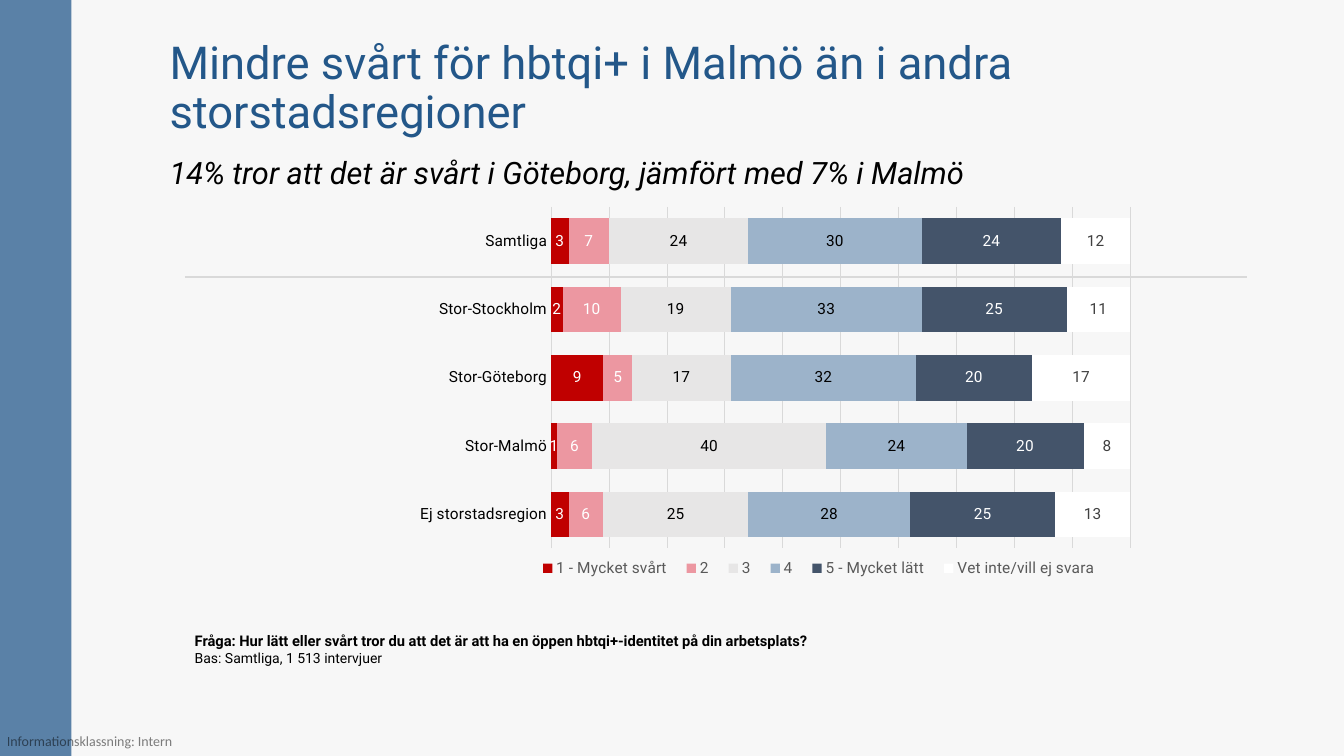
import pptx
import pptx.chart.data
import pptx.dml.color
import pptx.enum.chart
import pptx.enum.shapes
import pptx.enum.text
import pptx.oxml
import pptx.oxml.ns
import pptx.util
from pptx.util import Pt

COLORS = {
    "background": "F7F7F7", "band": "5A81A7", "title": "235789",
    "black": "000000", "white": "FFFFFF", "rule": "D9D9D9",
    "legend": "595959", "unsure_label": "404040",
    "hard": "C00000", "rather_hard": "EC97A1", "neutral": "E7E6E6",
    "rather_easy": "9CB3CA", "easy": "44546A",
}
RGB = {name: pptx.dml.color.RGBColor.from_string(h) for name, h in COLORS.items()}
qn = pptx.oxml.ns.qn


def add_text(text, left, top, width, height, size, color="black", font="Roboto",
             bold=False, italic=False, middle=False, margins=True, spacing=None):
    """Add a text box with one paragraph per line of text."""
    tf = s.shapes.add_textbox(Pt(left), Pt(top), Pt(width), Pt(height)).text_frame
    tf.word_wrap = margins
    if middle:
        tf.vertical_anchor = pptx.enum.text.MSO_ANCHOR.MIDDLE
    if not margins:
        tf.margin_left = tf.margin_right = tf.margin_top = tf.margin_bottom = 0
    for i, line in enumerate(text.split("\n")):
        p = tf.paragraphs[0] if i == 0 else tf.add_paragraph()
        p.line_spacing = spacing
        r = p.add_run()
        r.text = line
        r.font.size, r.font.name = Pt(size), font
        r.font.bold, r.font.italic = bold, italic
        r.font.color.rgb = RGB[color]
    return tf


def set_layout(parent, position, x, y, w, h, target=""):
    """Place a chart part by fractions of the chart's size."""
    for old in parent.findall(qn("c:layout")):
        parent.remove(old)
    parent.insert(position, pptx.oxml.parse_xml(
        f'<c:layout {pptx.oxml.ns.nsdecls("c")}><c:manualLayout>{target}'
        '<c:xMode val="edge"/><c:yMode val="edge"/>'
        f'<c:x val="{x}"/><c:y val="{y}"/><c:w val="{w}"/><c:h val="{h}"/>'
        '</c:manualLayout></c:layout>'))


prs = pptx.Presentation()
prs.slide_width, prs.slide_height = Pt(960), Pt(540)
s = prs.slides.add_slide(prs.slide_layouts[6])
s.background.fill.solid()
s.background.fill.fore_color.rgb = RGB["background"]

# Side band and classification
band = s.shapes.add_shape(pptx.enum.shapes.MSO_SHAPE.RECTANGLE, 0, 0, Pt(51), Pt(540))
band.shadow.inherit = False
band.fill.solid()
band.fill.fore_color.rgb = RGB["band"]
band.line.fill.background()
tf = add_text("Informationsklassning: Intern", 5, 523, 121, 12, 10,
              font="Calibri", margins=False)
fill = tf.paragraphs[0].runs[0].font.fill
fill.solid()
fill.fore_color.rgb = RGB["black"]
for clr in tf.paragraphs[0].runs[0].font._element.iter(qn("a:srgbClr")):
    clr.append(pptx.oxml.parse_xml(
        f'<a:alpha {pptx.oxml.ns.nsdecls("a")} val="50000"/>'))

add_text("Mindre svårt för hbtqi+ i Malmö än i andra storstadsregioner",
         114, 29, 732, 69, 32.4, "title", middle=True, spacing=0.9)

# Chart of answers by region
data = pptx.chart.data.CategoryChartData(number_format="0")
data.categories = ["Ej storstadsregion", "Stor-Malmö", "Stor-Göteborg",
                   "Stor-Stockholm", "Samtliga"]
answers = [
    ("1 - Mycket svårt", (3, 1, 9, 2, 3), "hard", "white"),
    ("2", (6, 6, 5, 10, 7), "rather_hard", "white"),
    ("3", (25, 40, 17, 19, 24), "neutral", "black"),
    ("4", (28, 24, 32, 33, 30), "rather_easy", "black"),
    ("5 - Mycket lätt", (25, 20, 20, 25, 24), "easy", "white"),
    ("Vet inte/vill ej svara", (13, 8, 17, 11, 12), "white", "unsure_label"),
]
for name, values, _, _ in answers:
    data.add_series(name, values)
chart = s.shapes.add_chart(pptx.enum.chart.XL_CHART_TYPE.BAR_STACKED_100,
                           Pt(146), Pt(136), Pt(680.5), Pt(312), data).chart
chart.has_title = False
chart.font.name, chart.font.size = "Roboto", Pt(10)
chart.font.color.rgb = RGB["black"]

plot = chart.plots[0]
plot.gap_width, plot.overlap, plot.vary_by_categories = 50, 100, False
for series, (_, _, color, label_color) in zip(plot.series, answers):
    series.format.fill.solid()
    series.format.fill.fore_color.rgb = RGB[color]
    labels = series.data_labels
    labels.show_value = True
    labels.position = pptx.enum.chart.XL_LABEL_POSITION.CENTER
    labels.font.name, labels.font.size = "Roboto", Pt(11)
    labels.font.color.rgb = RGB[label_color]

regions, shares = chart.category_axis, chart.value_axis
regions.major_tick_mark = pptx.enum.chart.XL_TICK_MARK.NONE
regions.tick_labels.font.name, regions.tick_labels.font.size = "Roboto", Pt(11)
regions.tick_labels.font.color.rgb = RGB["black"]
shares.visible = False
shares.minimum_scale, shares.maximum_scale, shares.major_unit = 0, 1, 0.1
shares.has_major_gridlines = True
for line in (regions.format.line, shares.major_gridlines.format.line):
    line.color.rgb = RGB["rule"]
    line.width = Pt(0.75)

chart.has_legend = True
legend = chart.legend
legend.position = pptx.enum.chart.XL_LEGEND_POSITION.BOTTOM
legend.include_in_layout = False
legend.font.name, legend.font.size = "Roboto", Pt(11)
legend.font.color.rgb = RGB["legend"]
set_layout(chart._chartSpace.chart.plotArea, 0, 0.364, 0.038, 0.608, 0.782,
           '<c:layoutTarget val="inner"/>')
set_layout(legend._element, 1, 0.34, 0.83, 0.61, 0.07)

# Question, subtitle and the rule below the total
tf = add_text("Fråga: Hur lätt eller svårt tror du att det är att ha en öppen "
              "hbtqi+-identitet på din arbetsplats?\nBas: Samtliga, 1 513 intervjuer",
              132, 448, 628, 50, 10.5, bold=True)
base = tf.paragraphs[1].runs[0].font
base.size, base.bold = Pt(10), False
add_text("14% tror att det är svårt i Göteborg, jämfört med 7% i Malmö",
         114, 106, 780, 34, 22, italic=True, middle=True)
rule = s.shapes.add_connector(pptx.enum.shapes.MSO_CONNECTOR.STRAIGHT,
                              Pt(132), Pt(198), Pt(890.5), Pt(198))
rule.line.color.rgb = RGB["rule"]
rule.line.width = Pt(1.5)
rule._element.spPr.append(pptx.oxml.parse_xml(
    f'<a:effectLst {pptx.oxml.ns.nsdecls("a")}/>'))

prs.save("out.pptx")
